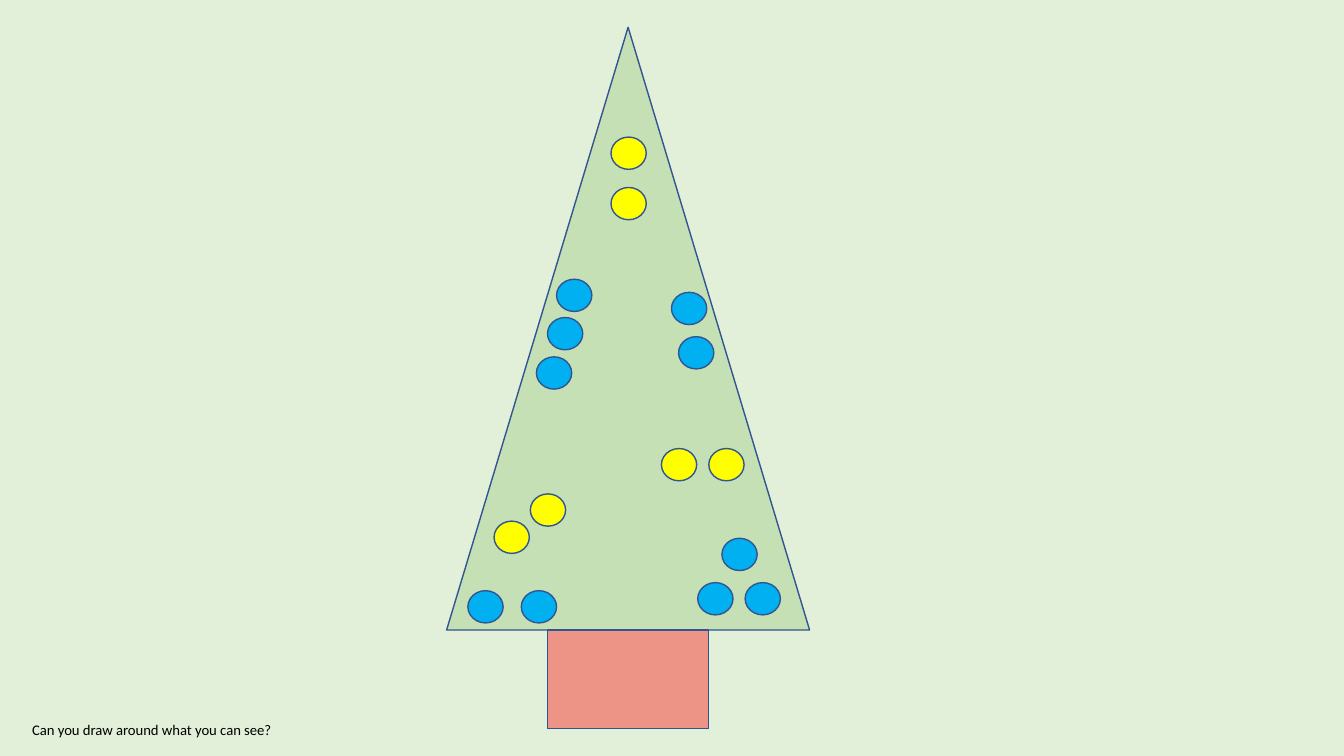
from dataclasses import dataclass

from lxml import etree
from pptx import Presentation
from pptx.dml.color import RGBColor
from pptx.enum.shapes import MSO_SHAPE
from pptx.enum.text import MSO_AUTO_SIZE
from pptx.oxml.ns import qn
from pptx.util import Inches, Pt

TRIANGLE = MSO_SHAPE.ISOSCELES_TRIANGLE
RECTANGLE = MSO_SHAPE.RECTANGLE
OVAL = MSO_SHAPE.OVAL
FIT_SHAPE = MSO_AUTO_SIZE.SHAPE_TO_FIT_TEXT


@dataclass(frozen=True)
class Theme:
    background: str = "E2F0D9"
    foliage: str = "C5E0B4"
    trunk: str = "FF0000"
    trunk_opacity: int = 38
    yellow: str = "FFFF00"
    blue: str = "00B0F0"
    outline: str = "325491"
    text: str = "000000"
    font: str = "Calibri"
    text_size: float = 10.5
    line_width: float = 1


THEME = Theme()
BAUBLE_SIZE = (0.35, 0.32)

# Bauble groups: colour and offsets from the top left of the tree
BAUBLE_GROUPS = [
    (THEME.yellow, [(1.63, 1.09), (1.63, 1.59)]),
    (THEME.blue, [(1.09, 2.5), (1, 2.88), (0.89, 3.27)]),
    (THEME.blue, [(2.23, 2.63), (2.3, 3.07)]),
    (THEME.yellow, [(2.13, 4.18), (2.6, 4.18)]),
    (THEME.yellow, [(0.83, 4.63), (0.47, 4.9)]),
    (THEME.blue, [(0.21, 5.59), (0.74, 5.59)]),
    (THEME.blue, [(2.73, 5.07), (2.49, 5.51), (2.96, 5.51)]),
]


def add_outlined_shape(slide, kind, left, top, width, height, color):
    shape = slide.shapes.add_shape(
        kind, Inches(left), Inches(top), Inches(width), Inches(height))
    shape.shadow.inherit = False
    shape.fill.solid()
    shape.fill.fore_color.rgb = RGBColor.from_string(color)
    shape.line.color.rgb = RGBColor.from_string(THEME.outline)
    shape.line.width = Pt(THEME.line_width)
    return shape


def set_opacity(shape, percent):
    color = shape.fill._xPr.find(qn("a:solidFill"))[0]
    etree.SubElement(color, qn("a:alpha")).set("val", str(percent * 1000))


def add_tree(slide, left, top, width, height):
    # Foliage
    foliage_height = 5.98
    add_outlined_shape(slide, TRIANGLE, left, top, width, foliage_height,
                       THEME.foliage)

    # Trunk, centred under the foliage
    trunk_width = 1.6
    trunk = add_outlined_shape(
        slide, RECTANGLE, left + (width - trunk_width) / 2,
        top + foliage_height, trunk_width, height - foliage_height, THEME.trunk)
    set_opacity(trunk, THEME.trunk_opacity)

    # Baubles
    for color, offsets in BAUBLE_GROUPS:
        for across, down in offsets:
            add_outlined_shape(slide, OVAL, left + across, top + down,
                               *BAUBLE_SIZE, color)


def add_question(slide, left, top, width, height):
    box = slide.shapes.add_textbox(
        Inches(left), Inches(top), Inches(width), Inches(height))
    frame = box.text_frame
    frame.text = "Can you draw around what you can see?"
    frame.word_wrap = False
    frame.auto_size = FIT_SHAPE
    font = frame.paragraphs[0].runs[0].font
    font.name = THEME.font
    font.size = Pt(THEME.text_size)
    font.color.rgb = RGBColor.from_string(THEME.text)


def main():
    presentation = Presentation()
    presentation.slide_width = Inches(13.33)
    presentation.slide_height = Inches(7.5)
    slide = presentation.slides.add_slide(presentation.slide_layouts[6])
    background = slide.background.fill
    background.solid()
    background.fore_color.rgb = RGBColor.from_string(THEME.background)

    add_tree(slide, 4.43, 0.27, 3.6, 6.96)
    add_question(slide, 0.22, 7.1, 2.62, 0.28)
    presentation.save("out.pptx")


if __name__ == "__main__":
    main()
